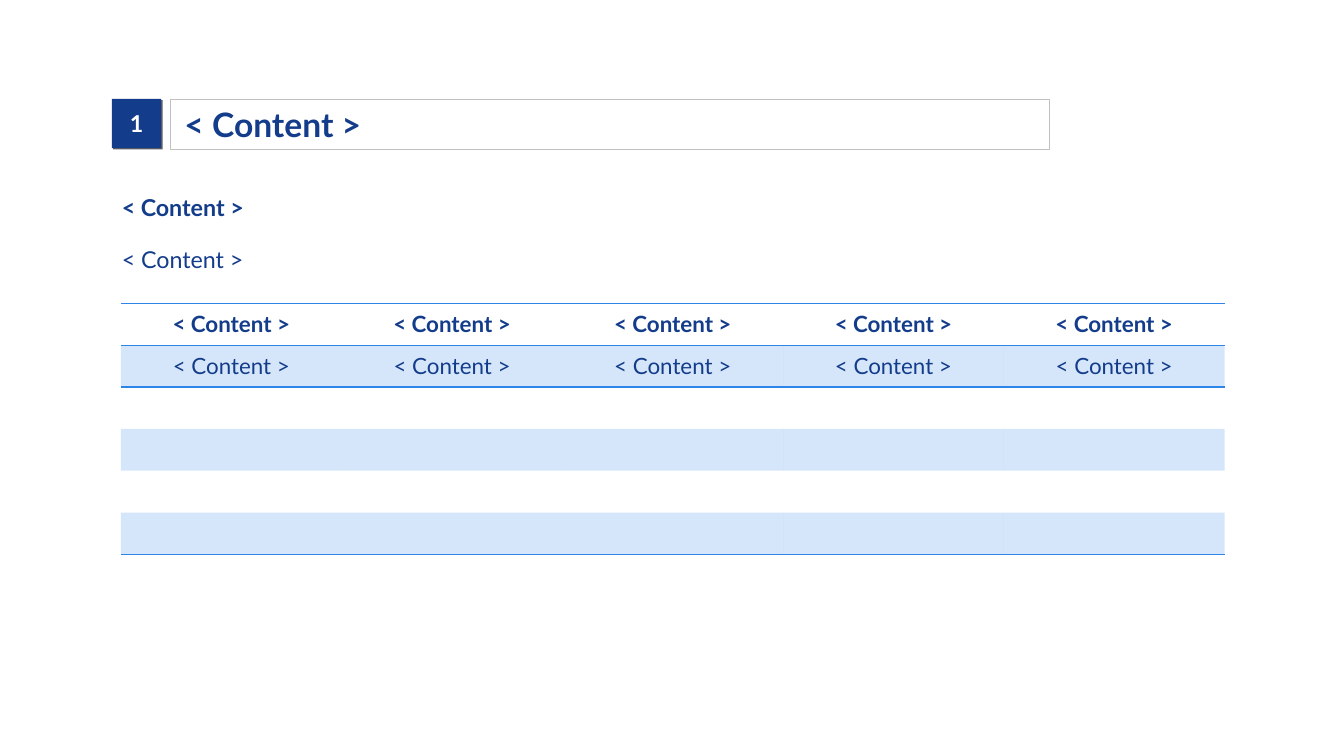
"""Build a slide with a numbered heading, two lines of text and a banded table."""
from dataclasses import dataclass

import pptx
import pptx.dml.color
import pptx.enum.shapes
import pptx.enum.text
import pptx.oxml
import pptx.oxml.ns
import pptx.util

Pt = pptx.util.Pt
RGBColor = pptx.dml.color.RGBColor
Align = pptx.enum.text.PP_ALIGN
Anchor = pptx.enum.text.MSO_ANCHOR
Fit = pptx.enum.text.MSO_AUTO_SIZE

NAVY = RGBColor(0x13, 0x3C, 0x8B)
BLUE = RGBColor(0x2D, 0x86, 0xE7)
SILVER = RGBColor(0xC0, 0xC0, 0xC0)
GREY = RGBColor(0x5F, 0x5F, 0x5F)
WHITE = RGBColor(0xFF, 0xFF, 0xFF)

FONT = "Lato"
LABEL = "< Content >"
ROWS, COLS = 6, 5
PLAIN = "{2D5ABB26-0587-4C30-8999-92F81FD0307C}"
NAMES = pptx.oxml.ns.nsdecls("a")


@dataclass
class Line:
    top: float
    width: float
    bold: bool


@dataclass
class Panel:
    left: float
    top: float
    width: float
    height: float
    text: str
    size: float
    ink: RGBColor
    align: Align
    pads: tuple[float, float, float, float]
    fill: RGBColor | None = None
    edge: RGBColor | None = None
    shade: RGBColor | None = None


LINES = [Line(134.64, 203.76, True), Line(171.36, 403.2, False)]
PANELS = [
    Panel(121.68, 71.28, 627.84, 35.28, LABEL, 24, NAVY, Align.LEFT,
          (10.08, 3.6, 3.6, 3.6), edge=SILVER),
    Panel(79.92, 70.56, 35.28, 35.28, "1", 16.6, WHITE, Align.CENTER,
          (5.04, 2.88, 5.04, 2.88), fill=NAVY, shade=GREY),
]


def write(frame, text: str, size: float, ink: RGBColor, bold: bool,
          align: Align = Align.LEFT) -> None:
    """Fill a text frame with one styled paragraph."""
    frame.text = text
    para = frame.paragraphs[0]
    para.alignment = align
    font = para.runs[0].font
    font.name, font.size, font.bold = FONT, Pt(size), bold
    font.color.rgb = ink


def inset(item, pads: tuple[float, float, float, float]) -> None:
    """Set the left, top, right and bottom margins."""
    (item.margin_left, item.margin_top,
     item.margin_right, item.margin_bottom) = map(Pt, pads)


def add_line(slide, line: Line) -> None:
    """Add one line of body text."""
    box = slide.shapes.add_textbox(
        Pt(79.92), Pt(line.top), Pt(line.width), Pt(27.36))
    frame = box.text_frame
    frame.word_wrap = True
    frame.auto_size = Fit.SHAPE_TO_FIT_TEXT
    write(frame, LABEL, 16.6, NAVY, line.bold)


def add_panel(group, panel: Panel) -> None:
    """Add one rectangle of the heading."""
    shape = group.shapes.add_shape(
        pptx.enum.shapes.MSO_SHAPE.RECTANGLE, Pt(panel.left), Pt(panel.top),
        Pt(panel.width), Pt(panel.height))
    shape.shadow.inherit = False
    if panel.fill is None:
        shape.fill.background()
    else:
        shape.fill.solid()
        shape.fill.fore_color.rgb = panel.fill
    if panel.edge is None:
        shape.line.fill.background()
    else:
        shape.line.color.rgb = panel.edge
        shape.line.width = Pt(0.5)
    if panel.shade is not None:
        shape._element.spPr.find(pptx.oxml.ns.qn("a:effectLst")).append(
            pptx.oxml.parse_xml(
                f'<a:outerShdw {NAMES} dist="{Pt(1.4)}" dir="2700000" '
                f'algn="ctr" rotWithShape="0">'
                f'<a:srgbClr val="{panel.shade}"/></a:outerShdw>'))
    frame = shape.text_frame
    frame.word_wrap = False
    frame.vertical_anchor = Anchor.MIDDLE
    inset(frame, panel.pads)
    write(frame, panel.text, panel.size, panel.ink, True, panel.align)


def add_edge(cell, tag: str) -> None:
    """Draw one border of a cell."""
    cell._tc.get_or_add_tcPr().append(pptx.oxml.parse_xml(
        f'<a:{tag} {NAMES} w="{Pt(1)}"><a:solidFill>'
        f'<a:srgbClr val="{BLUE}"/></a:solidFill></a:{tag}>'))


def tint(cell) -> None:
    """Fill a cell with see-through blue."""
    cell.fill.solid()
    cell.fill.fore_color.rgb = BLUE
    color = cell._tc.tcPr.find(
        pptx.oxml.ns.qn("a:solidFill")).find(pptx.oxml.ns.qn("a:srgbClr"))
    color.append(pptx.oxml.parse_xml(f'<a:alpha {NAMES} val="20000"/>'))


def add_grid(slide) -> None:
    """Add the banded table."""
    table = slide.shapes.add_table(
        ROWS, COLS, Pt(86.4), Pt(216.72), Pt(788.4), Pt(179.28)).table
    table.first_row = table.horz_banding = False
    table._tbl.tblPr.find(pptx.oxml.ns.qn("a:tableStyleId")).text = PLAIN
    for row in range(ROWS):
        for col in range(COLS):
            cell = table.cell(row, col)
            cell.vertical_anchor = Anchor.MIDDLE
            inset(cell, (5.76, 2.88, 5.76, 2.88))
            if row < 2:
                write(cell.text_frame, LABEL, 16, NAVY, row == 0, Align.CENTER)
                add_edge(cell, "lnT")
            if row in (0, ROWS - 1):
                add_edge(cell, "lnB")
            if row % 2:
                tint(cell)
            else:
                cell.fill.background()


def main() -> None:
    """Build and save the slide."""
    deck = pptx.Presentation()
    deck.slide_width, deck.slide_height = Pt(960), Pt(540)
    slide = deck.slides.add_slide(deck.slide_layouts[6])
    for line in LINES:
        add_line(slide, line)
    group = slide.shapes.add_group_shape()
    for panel in PANELS:
        add_panel(group, panel)
    add_grid(slide)
    deck.save("out.pptx")


if __name__ == "__main__":
    main()
